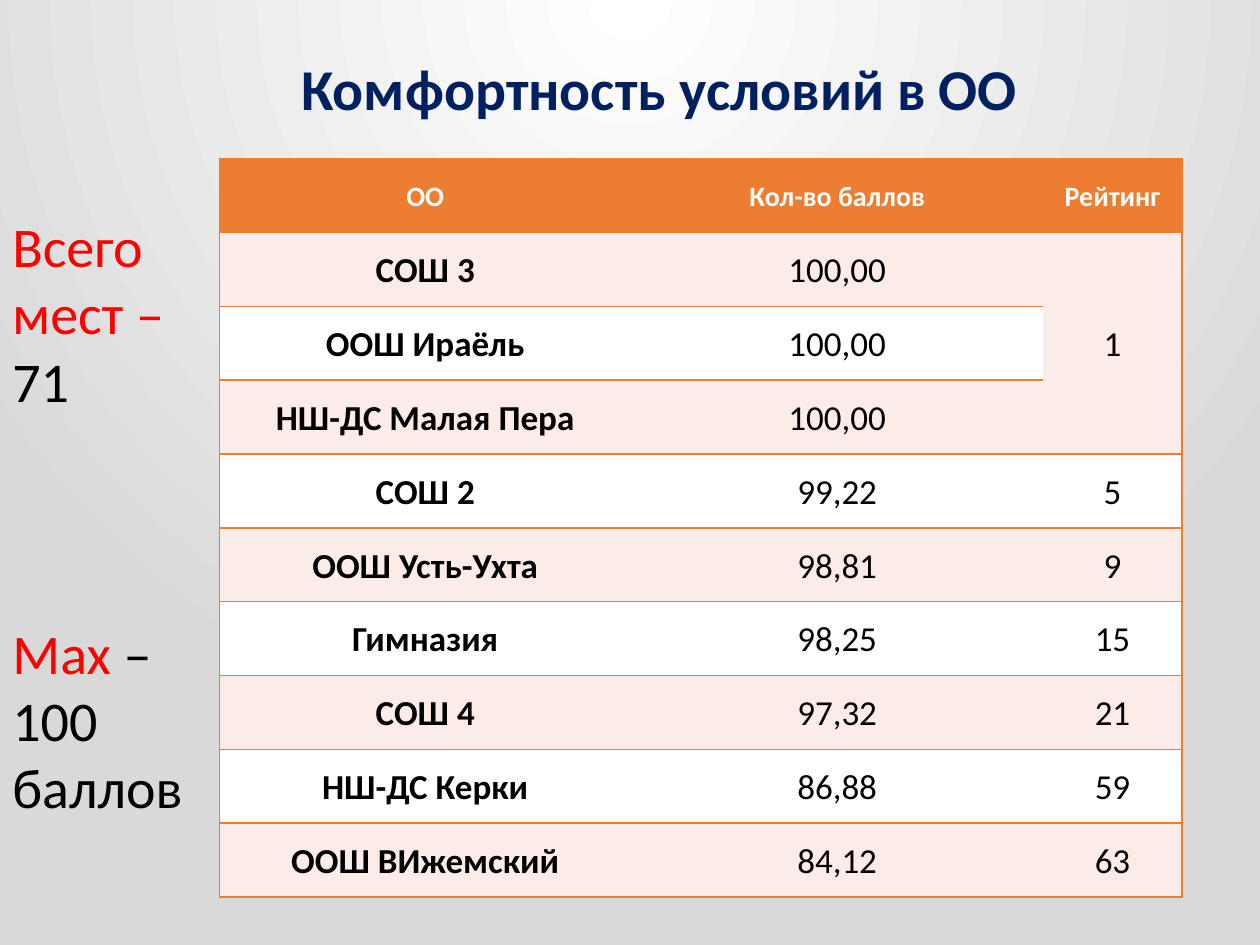
from dataclasses import dataclass

from lxml.etree import SubElement
from pptx import Presentation
from pptx.dml.color import RGBColor
from pptx.enum.text import MSO_ANCHOR as Anchor, PP_ALIGN as Align
from pptx.oxml.ns import qn
from pptx.util import Inches, Pt


@dataclass(frozen=True)
class Theme:
    font: str = "Calibri"
    navy: str = "002060"
    orange: str = "ED7D31"
    blush: str = "FCECE8"
    white: str = "FFFFFF"
    grey: str = "D9D9D9"
    red: str = "FF0000"
    black: str = "000000"
    title_size: float = 33
    header_size: float = 16
    cell_size: float = 20
    note_size: float = 32


THEME = Theme()
NO_GRID_STYLE = "{2D5ABB26-0587-4C30-8999-92F81FD0307C}"

HEADERS = ("ОО", "Кол-во баллов", "Рейтинг")
SCHOOLS = (
    ("СОШ 3", "100,00", "1"),
    ("ООШ Ираёль", "100,00", ""),
    ("НШ-ДС Малая Пера", "100,00", ""),
    ("СОШ 2", "99,22", "5"),
    ("ООШ Усть-Ухта", "98,81", "9"),
    ("Гимназия", "98,25", "15"),
    ("СОШ 4", "97,32", "21"),
    ("НШ-ДС Керки", "86,88", "59"),
    ("ООШ ВИжемский", "84,12", "63"),
)
SHARED_RANK_ROWS = (1, 3)
COLUMN_WIDTHS = (3.27, 3.27, 1.1)

# Each paragraph: space before in points, then its coloured runs
NOTES = (
    (0, (("Всего мест –", THEME.red),)),
    (0, (("71", THEME.black),)),
    (117, (("Max ", THEME.red), ("–", THEME.black))),
    (0, (("100 баллов", THEME.black),)),
)


def style_font(font, size, color=None, bold=False):
    font.name = THEME.font
    font.size = Pt(size)
    font.bold = bold
    if color:
        font.color.rgb = RGBColor.from_string(color)


def paint_background(slide):
    fill = slide.background.fill
    fill.gradient()
    for stop, color in zip(fill.gradient_stops, (THEME.white, THEME.grey)):
        stop.color.rgb = RGBColor.from_string(color)
    # Turn the linear gradient into a circular one centred above the slide
    linear = next(slide.element.iter(qn("a:lin")))
    gradient = linear.getparent()
    gradient.remove(linear)
    circle = SubElement(gradient, qn("a:path"), path="circle")
    SubElement(circle, qn("a:fillToRect"), l="50000", t="-80000", r="50000", b="180000")


def set_title(slide, text):
    title = slide.shapes.title
    title.left, title.top = Inches(0.61), Inches(0)
    title.width, title.height = Inches(9.25), Inches(1.45)
    frame = title.text_frame
    frame.text = text
    frame.vertical_anchor = Anchor.MIDDLE
    paragraph = frame.paragraphs[0]
    paragraph.alignment = Align.CENTER
    paragraph.line_spacing = 0.9
    style_font(paragraph.font, THEME.title_size, THEME.navy, bold=True)


def add_borders(cell, sides):
    properties = cell._tc.get_or_add_tcPr()
    for side in sides:
        line = SubElement(properties, qn(f"a:ln{side}"), w=str(Pt(1)))
        SubElement(SubElement(line, qn("a:solidFill")), qn("a:srgbClr"), val=THEME.orange)


def format_cell(cell, text, fill, sides, size, color, bold):
    add_borders(cell, sides)
    cell.fill.solid()
    cell.fill.fore_color.rgb = RGBColor.from_string(fill)
    cell.vertical_anchor = Anchor.MIDDLE
    cell.margin_left = cell.margin_right = Inches(0.04)
    cell.margin_top = cell.margin_bottom = 0
    cell.text = text
    paragraph = cell.text_frame.paragraphs[0]
    paragraph.alignment = Align.CENTER
    paragraph.line_spacing = 1.07
    style_font(paragraph.font, size, color, bold)


def add_rating_table(slide):
    rows = (HEADERS, *SCHOOLS)
    frame = slide.shapes.add_table(
        len(rows), len(HEADERS), Inches(1.74), Inches(1.26), Inches(7.64), Inches(5.86))
    table = frame.table
    next(table._tbl.iter(qn("a:tableStyleId"))).text = NO_GRID_STYLE
    for column, width in zip(table.columns, COLUMN_WIDTHS):
        column.width = Inches(width)

    # The leading schools share one rank
    first, last = SHARED_RANK_ROWS
    table.cell(first, 2).merge(table.cell(last, 2))

    outer_sides = ("LTB", "TB", "RTB")
    for r, row in enumerate(rows):
        is_header = r == 0
        band = THEME.blush if r % 2 else THEME.white
        for c, text in enumerate(row):
            cell = table.cell(r, c)
            if cell.is_spanned:
                continue
            format_cell(
                cell, text,
                fill=THEME.orange if is_header else band,
                sides=outer_sides[c],
                size=THEME.header_size if is_header else THEME.cell_size,
                color=THEME.white if is_header else THEME.black,
                bold=is_header or c == 0)


def add_notes_column(slide):
    box = slide.shapes.add_textbox(Inches(0), Inches(1.63), Inches(2.09), Inches(4.95))
    frame = box.text_frame
    frame.word_wrap = True
    for i, (gap, runs) in enumerate(NOTES):
        paragraph = frame.add_paragraph() if i else frame.paragraphs[0]
        if gap:
            paragraph.space_before = Pt(gap)
        style_font(paragraph.font, THEME.note_size)
        for text, color in runs:
            run = paragraph.add_run()
            run.text = text
            run.font.color.rgb = RGBColor.from_string(color)


def main():
    deck = Presentation()
    deck.slide_width, deck.slide_height = Inches(10), Inches(7.5)
    slide = deck.slides.add_slide(deck.slide_layouts[5])
    paint_background(slide)
    set_title(slide, "Комфортность условий в ОО")
    add_rating_table(slide)
    add_notes_column(slide)
    deck.save("out.pptx")


if __name__ == "__main__":
    main()
